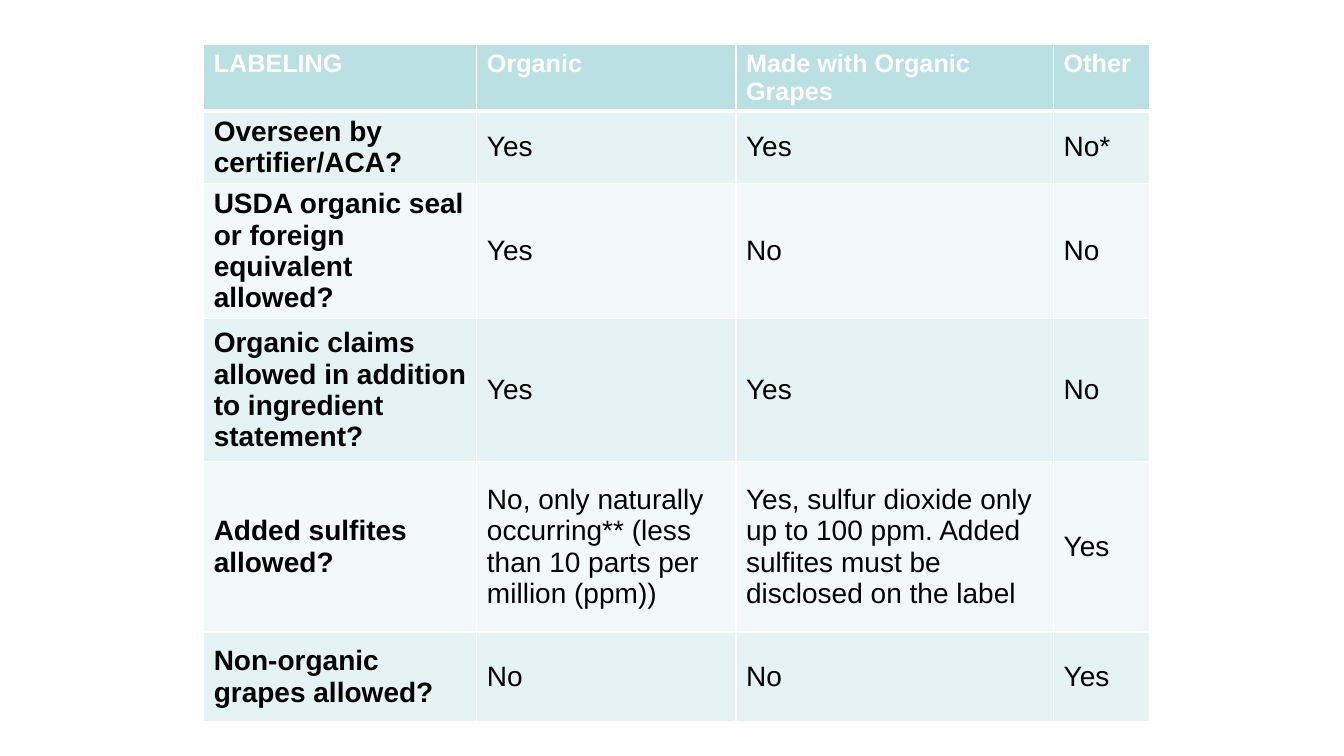
"""Build a slide with a table of wine labeling rules."""
import dataclasses

import pptx
import pptx.dml.color
import pptx.enum.text
import pptx.oxml
import pptx.oxml.ns
import pptx.util

PX = 9144
COLORS = {"header": "BBE0E3", "odd": "E6F3F4", "even": "F3F9F9",
          "line": "FFFFFF", "light": "FFFFFF", "dark": "000000"}
COLUMN_WIDTHS = (271, 257, 315, 95)


@dataclasses.dataclass(frozen=True)
class LabelRow:
    height: int
    texts: tuple[str, str, str, str]


ROWS = (
    LabelRow(61, ("LABELING", "Organic", "Made with Organic Grapes", "Other")),
    LabelRow(62, ("Overseen by certifier/ACA?", "Yes", "Yes", "No*")),
    LabelRow(116, ("USDA organic seal or foreign equivalent allowed?", "Yes", "No", "No")),
    LabelRow(142, ("Organic claims allowed in addition to ingredient statement?",
                   "Yes", "Yes", "No")),
    LabelRow(169, ("Added sulfites allowed?",
                   "No, only naturally occurring** (less than 10 parts per million (ppm))",
                   "Yes, sulfur dioxide only up to 100 ppm. "
                   "Added sulfites must be disclosed on the label",
                   "Yes")),
    LabelRow(89, ("Non-organic grapes allowed?", "No", "No", "Yes")),
)


def px(length: int) -> pptx.util.Emu:
    return pptx.util.Emu(length * PX)


def rgb(name: str) -> pptx.dml.color.RGBColor:
    return pptx.dml.color.RGBColor.from_string(COLORS[name])


def write_text(tf, text: str, *, size: int, color: str, bold: bool) -> None:
    r = tf.paragraphs[0].add_run()
    r.text = text
    r.font.name = "Arial"
    r.font.size = pptx.util.Pt(size)
    r.font.bold = bold
    r.font.color.rgb = rgb(color)


def add_borders(cell, **widths: float) -> None:
    tc_pr = cell._tc.get_or_add_tcPr()
    for side in "LRTB":
        width = pptx.util.Pt(widths.get(side, 0.96))
        tc_pr.append(pptx.oxml.parse_xml(
            f'<a:ln{side} {pptx.oxml.ns.nsdecls("a")} w="{width}"><a:solidFill>'
            f'<a:srgbClr val="{COLORS["line"]}"/></a:solidFill></a:ln{side}>'))


def fill_cell(cell, text: str, row: int, column: int) -> None:
    header = row == 0
    anchor = pptx.enum.text.MSO_ANCHOR
    cell.vertical_anchor = anchor.TOP if header else anchor.MIDDLE
    add_borders(cell, **{0: {"B": 3}, 1: {"T": 3}}.get(row, {}))
    cell.fill.solid()
    cell.fill.fore_color.rgb = rgb("header" if header else "odd" if row % 2 else "even")
    write_text(cell.text_frame, text, size=18 if header else 20,
               color="light" if header else "dark", bold=header or column == 0)


def add_label_table(s) -> None:
    frame = s.shapes.add_table(len(ROWS), len(COLUMN_WIDTHS),
                               px(202), px(44), px(sum(COLUMN_WIDTHS)), px(672))
    table = frame.table
    table.horz_banding = False
    for column, width in zip(table.columns, COLUMN_WIDTHS):
        column.width = px(width)
    for i, label_row in enumerate(ROWS):
        table.rows[i].height = px(label_row.height)
        for j, text in enumerate(label_row.texts):
            fill_cell(table.cell(i, j), text, i, j)
    frame.height = px(672)


def main() -> None:
    prs = pptx.Presentation()
    prs.slide_width, prs.slide_height = px(1333), px(750)
    s = prs.slides.add_slide(prs.slide_layouts[6])
    add_label_table(s)
    prs.save("out.pptx")


if __name__ == "__main__":
    main()
